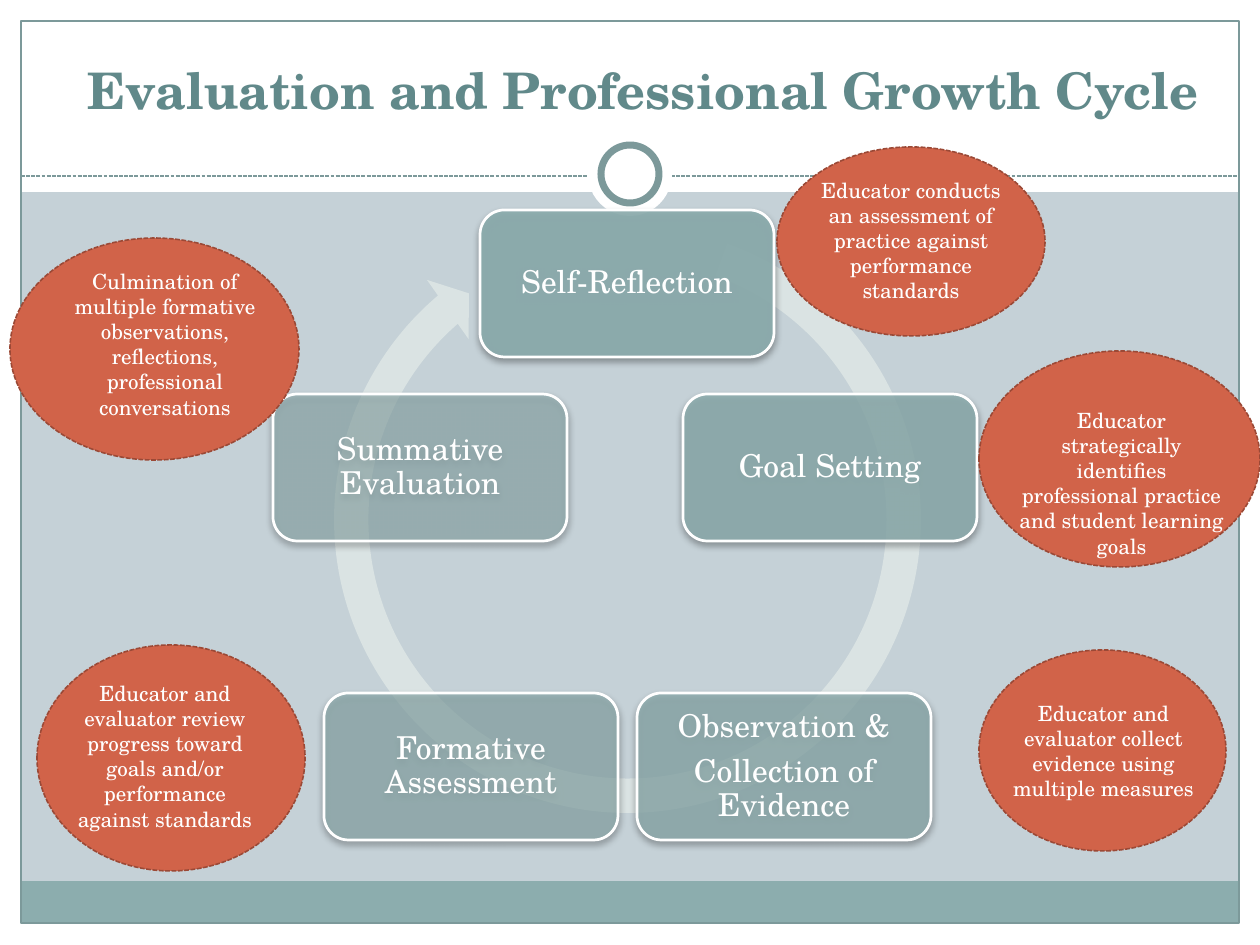
"""Build the slide on the evaluation and professional growth cycle."""
from dataclasses import dataclass

from lxml.etree import SubElement as Sub
from pptx import Presentation as Deck
from pptx.dml.color import RGBColor as Rgb
from pptx.enum.dml import MSO_LINE as Dash
from pptx.enum.shapes import MSO_CONNECTOR as Link, MSO_SHAPE as Kind
from pptx.enum.text import MSO_ANCHOR as Anchor, MSO_AUTO_SIZE as Fit, PP_ALIGN as Align
from pptx.oxml.ns import qn
from pptx.util import Pt

SCALE = 914400 / 126
WIDE, HIGH, EDGE = 1260, 945, 21
BOX = 294, 147


@dataclass(frozen=True)
class Theme:
    font: str = "TeX Gyre Schola"
    back: str = "C5D1D7"
    white: str = "FFFFFF"
    teal: str = "8CADAE"
    rim: str = "7C999A"
    head: str = "61898A"
    pale: str = "DAE3E3"
    rust: str = "D16349"
    dark: str = "9B4936"
    big: float = 28.8
    mid: float = 18
    small: float = 12


LOOK = Theme()

STEPS = [
    (480, 210, ["Self-Reflection"]),
    (683, 394, ["Goal Setting"]),
    (637, 693, ["Observation &", "Collection of Evidence"]),
    (324, 693, ["Formative Assessment"]),
    (273, 394, ["Summative Evaluation"]),
]

NOTES = [
    ((777, 147, 268, 189), (806, 171, 210, 140),
     "Educator conducts an assessment of practice against performance standards"),
    ((10, 238, 289, 222), (60, 262, 210, 165),
     "Culmination of multiple formative observations, reflections, "
     "professional conversations"),
    ((37, 645, 268, 226), (60, 674, 210, 165),
     "Educator and evaluator review progress toward goals and/or "
     "performance against standards"),
    ((979, 351, 281, 216), (1005, 401, 233, 115),
     "Educator strategically\nidentifies professional practice and student learning goals"),
    ((979, 650, 247, 201), (987, 694, 233, 115),
     "Educator and evaluator collect evidence using multiple measures"),
]


def px(*nums):
    return [round(num * SCALE) for num in nums]


def stroke(line, hue, width, dash=None):
    line.color.rgb = Rgb.from_string(hue)
    line.width = Pt(width)
    if dash:
        line.dash_style = dash


def draw(slide, kind, area, fill=None, rim=None):
    shape = slide.shapes.add_shape(kind, *px(*area))
    shape.shadow.inherit = False
    if fill:
        shape.fill.solid()
        shape.fill.fore_color.rgb = Rgb.from_string(fill)
    else:
        shape.fill.background()
    if rim:
        stroke(shape.line, *rim)
    else:
        shape.line.fill.background()
    return shape


def write(para, words, size, hue, bold=False):
    para.alignment = Align.CENTER
    for num, part in enumerate(words.split("\n")):
        if num:
            para.add_line_break()
        run = para.add_run()
        run.text = part
        run.font.name = LOOK.font
        run.font.size = Pt(size)
        run.font.bold = bold
        run.font.color.rgb = Rgb.from_string(hue)


def frame(slide):
    span = WIDE - 2 * EDGE
    for area in [(0, 924, WIDE, EDGE), (0, 0, WIDE, 192),
                 (0, 0, EDGE, HIGH), (WIDE - EDGE, 0, EDGE, HIGH)]:
        draw(slide, Kind.RECTANGLE, area, LOOK.white)
    draw(slide, Kind.RECTANGLE, (EDGE, 881, span, 43), LOOK.teal)
    draw(slide, Kind.RECTANGLE, (EDGE, EDGE, span, 902), rim=(LOOK.rim, 0.75))
    rule = slide.shapes.add_connector(Link.STRAIGHT, *px(EDGE, 176, WIDE - EDGE, 176))
    stroke(rule.line, LOOK.rim, 0.75, Dash.SQUARE_DOT)
    Sub(rule.element.spPr, qn("a:effectLst"))
    draw(slide, Kind.OVAL, (588, 132, 84, 84), LOOK.white)
    draw(slide, Kind.OVAL, (601, 145, 58, 58), LOOK.white, (LOOK.rim, 4))


def title(slide, words):
    head = slide.shapes.title
    head.element.getparent().append(head.element)
    head.left, head.top, head.width, head.height = px(29, 21, 1228, 105)
    text = head.text_frame
    text.auto_size = Fit.NONE
    text.vertical_anchor = Anchor.BOTTOM
    write(text.paragraphs[0], words, LOOK.big, LOOK.head, True)


def arrow(slide):
    ring = draw(slide, Kind.CIRCULAR_ARROW, (315, 207, 625, 625), LOOK.pale)
    for num, turn in enumerate([0.055, 3.307, 137.665, 173.917, 0.058]):
        ring.adjustments[num] = turn


def shade(shape, alpha):
    props = shape.element.spPr
    Sub(props.find(qn("a:solidFill"))[0], qn("a:alpha"), val=str(alpha * 1000))
    cast = Sub(props.find(qn("a:effectLst")), qn("a:outerShdw"), blurRad=str(Pt(4)),
               dist=str(Pt(2)), dir="5400000", rotWithShape="0")
    Sub(Sub(cast, qn("a:srgbClr"), val="000000"), qn("a:alpha"), val="35000")


def step(slide, left, top, lines, alpha):
    box = draw(slide, Kind.ROUNDED_RECTANGLE, (left, top, *BOX),
               LOOK.teal, (LOOK.white, 1.57))
    shade(box, alpha)
    text = box.text_frame
    text.word_wrap = True
    text.vertical_anchor = Anchor.MIDDLE
    text.margin_left, text.margin_top, text.margin_right, text.margin_bottom = px(9, 9, 9, 9)
    for num, words in enumerate(lines):
        para = text.add_paragraph() if num else text.paragraphs[0]
        write(para, words, LOOK.mid, LOOK.white)
        para.line_spacing = 0.9
        para.space_after = Pt(0)
        gap = para._p.pPr.find(qn("a:spcAft"))
        gap.remove(gap[0])
        Sub(gap, qn("a:spcPct"), val="35000")


def note(slide, oval, area, words):
    draw(slide, Kind.OVAL, oval, LOOK.rust, (LOOK.dark, 0.9, Dash.SQUARE_DOT))
    text = slide.shapes.add_textbox(*px(*area)).text_frame
    text.word_wrap = True
    text.auto_size = Fit.SHAPE_TO_FIT_TEXT
    write(text.paragraphs[0], words, LOOK.small, LOOK.white)


def main():
    deck = Deck()
    deck.slide_width, deck.slide_height = px(WIDE, HIGH)
    slide = deck.slides.add_slide(deck.slide_layouts[5])
    slide.background.fill.solid()
    slide.background.fill.fore_color.rgb = Rgb.from_string(LOOK.back)
    frame(slide)
    title(slide, "Evaluation and Professional Growth Cycle")
    arrow(slide)
    for num, (left, top, lines) in enumerate(STEPS):
        step(slide, left, top, lines, 90 - 10 * num)
    for oval, area, words in NOTES:
        note(slide, oval, area, words)
    deck.save("out.pptx")


if __name__ == "__main__":
    main()
